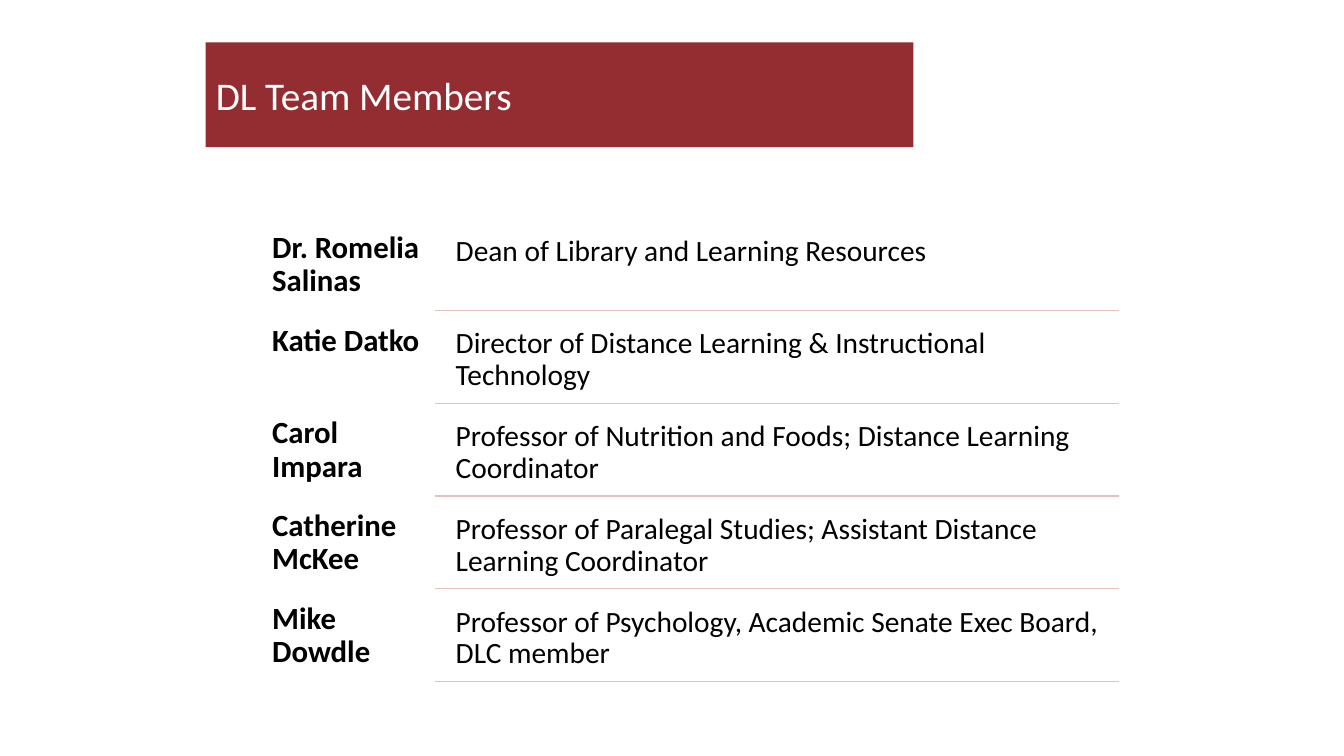
"""Build the DL Team Members slide."""
from dataclasses import dataclass

from lxml import etree
from pptx import Presentation
from pptx import util as u
from pptx.dml.color import RGBColor
from pptx.enum import shapes, text
from pptx.oxml import ns

PX = 9144
SLIDE_WIDTH, SLIDE_HEIGHT = 1333, 750
ROW_TOP, ROW_PITCH = 221, 92
NAME_LEFT, NAME_WIDTH = 261, 170
ROLE_LEFT, ROLE_WIDTH, ROLE_HEIGHT, ROLE_OFFSET = 443, 667, 83, 4
RULE_LEFT, RULE_RIGHT = 431, 1110
INSET = 9

TEAM = [
    ("Dr. Romelia Salinas", "Dean of Library and Learning Resources"),
    ("Katie Datko", "Director of Distance Learning & Instructional Technology"),
    ("Carol Impara", "Professor of Nutrition and Foods; Distance Learning Coordinator"),
    ("Catherine McKee", "Professor of Paralegal Studies; Assistant Distance Learning Coordinator"),
    ("Mike Dowdle", "Professor of Psychology, Academic Senate Exec Board, DLC member"),
]


@dataclass(frozen=True)
class Theme:
    font: str = "Calibri"
    banner: str = "932D32"
    title_text: str = "FFFFFF"
    body_text: str = "000000"
    rule: str = "E4C0C0"
    title_size: int = 28
    name_size: int = 22
    role_size: int = 21
    rule_width: int = 1


class SlideBuilder:
    def __init__(self, slide, theme):
        self.slide = slide
        self.theme = theme
        self.roster = slide.shapes.add_group_shape()

    def format_font(self, paragraph, size, color, bold=False):
        font = paragraph.font
        font.name = self.theme.font
        font.size = u.Pt(size)
        font.bold = bold
        font.color.rgb = RGBColor.from_string(color)

    def title(self, wording, left, top, width, height):
        shape = self.slide.shapes.title
        shape.left, shape.top = left * PX, top * PX
        shape.width, shape.height = width * PX, height * PX
        shape.fill.solid()
        shape.fill.fore_color.rgb = RGBColor.from_string(self.theme.banner)
        frame = shape.text_frame
        frame.text = wording
        frame.auto_size = text.MSO_AUTO_SIZE.NONE
        frame.vertical_anchor = text.MSO_ANCHOR.MIDDLE
        paragraph = frame.paragraphs[0]
        paragraph.alignment = text.PP_ALIGN.LEFT
        self.format_font(paragraph, self.theme.title_size, self.theme.title_text)

    def label(self, wording, left, top, width, height, size, bold=False):
        shape = self.roster.shapes.add_textbox(left * PX, top * PX, width * PX, height * PX)
        frame = shape.text_frame
        frame.word_wrap = True
        frame.margin_left = frame.margin_right = INSET * PX
        frame.margin_top = frame.margin_bottom = INSET * PX
        frame.text = wording
        paragraph = frame.paragraphs[0]
        paragraph.line_spacing = 0.9
        self.format_font(paragraph, size, self.theme.body_text, bold)

    def rule(self, left, right, top):
        connector = self.roster.shapes.add_connector(
            shapes.MSO_CONNECTOR.STRAIGHT, left * PX, top * PX, right * PX, top * PX)
        connector.line.color.rgb = RGBColor.from_string(self.theme.rule)
        connector.line.width = u.Pt(self.theme.rule_width)
        properties = connector.element.find(ns.qn("p:spPr"))
        etree.SubElement(properties, ns.qn("a:effectLst"))

    def member(self, name, role, top):
        role_top = top + ROLE_OFFSET
        self.label(name, NAME_LEFT, top, NAME_WIDTH, ROW_PITCH, self.theme.name_size, bold=True)
        self.label(role, ROLE_LEFT, role_top, ROLE_WIDTH, ROLE_HEIGHT, self.theme.role_size)
        self.rule(RULE_LEFT, RULE_RIGHT, role_top + ROLE_HEIGHT)


def main():
    presentation = Presentation()
    presentation.slide_width = SLIDE_WIDTH * PX
    presentation.slide_height = SLIDE_HEIGHT * PX
    slide = presentation.slides.add_slide(presentation.slide_layouts[5])
    builder = SlideBuilder(slide, Theme())
    builder.title("DL Team Members", 204, 42, 702, 104)
    for row, (name, role) in enumerate(TEAM):
        builder.member(name, role, ROW_TOP + row * ROW_PITCH)
    presentation.save("out.pptx")


if __name__ == "__main__":
    main()
